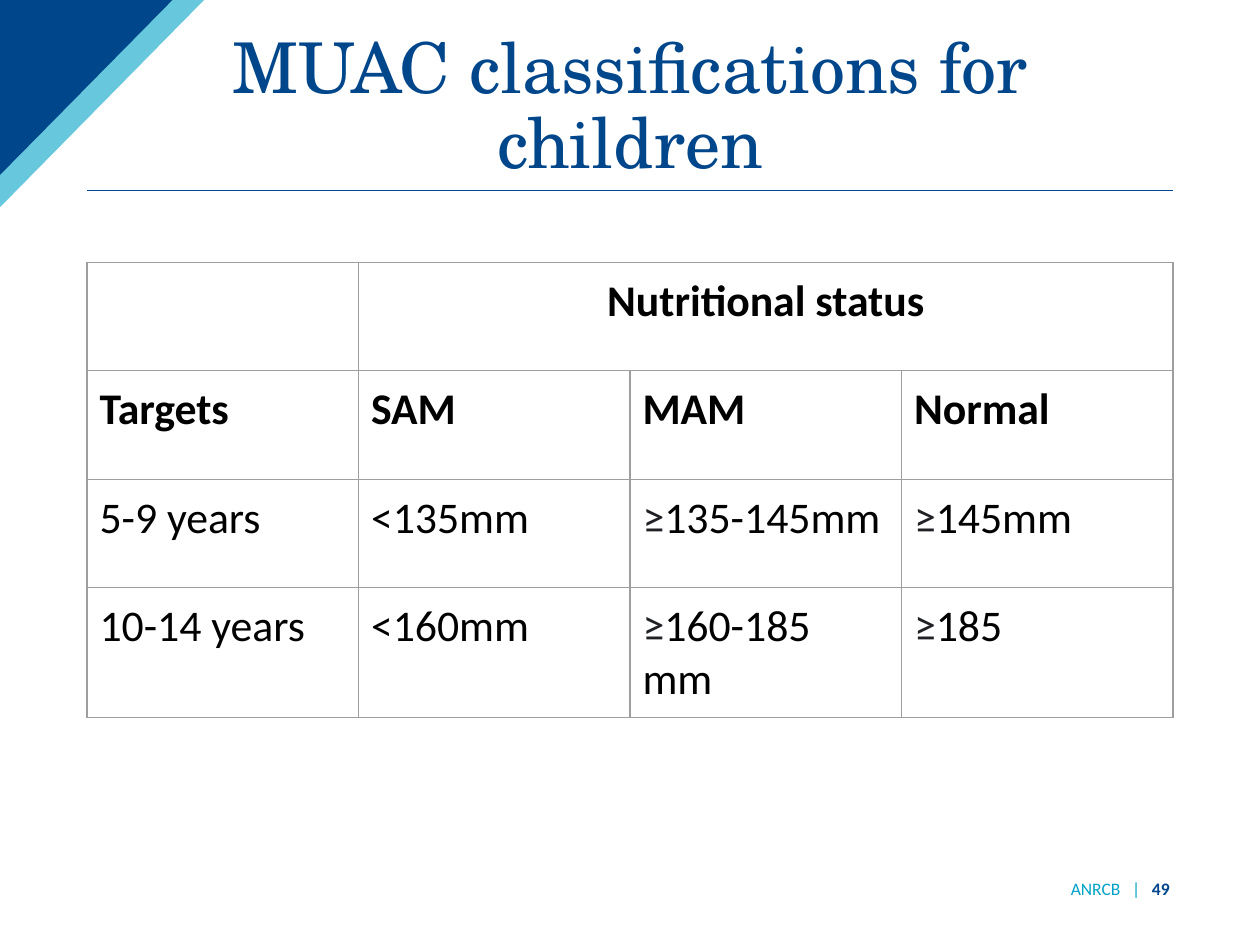
import pptx
import pptx.util
import pptx.dml.color
import pptx.enum.shapes
import pptx.enum.text
import pptx.oxml
import pptx.oxml.ns

Pt = pptx.util.Pt
Align = pptx.enum.text.PP_ALIGN
Anchor = pptx.enum.text.MSO_ANCHOR
qn = pptx.oxml.ns.qn
NS = pptx.oxml.ns.nsdecls("a")
HUES = {"navy": "00468B", "teal": "00A2C7", "black": "000000",
        "sign": "202124", "grid": "9E9E9E"}
SANS, SERIF = "Calibri", "TeX Gyre Schola"


def tint(name):
    return pptx.dml.color.RGBColor.from_string(HUES[name])


def add_run(para, text, size, hue, face=SANS, bold=False):
    run = para.add_run()
    run.text = text
    font = run.font
    font.size, font.name, font.bold = Pt(size), face, bold
    font.color.rgb = tint(hue)
    return run


def text_box(slide, box, anchor, align):
    frame = slide.shapes.add_textbox(*map(Pt, box)).text_frame
    frame.word_wrap = True
    frame.vertical_anchor = anchor
    para = frame.paragraphs[0]
    para.alignment = align
    return para


def corner(slide, box, hue, alpha=100):
    left, top, width, height = map(Pt, box)
    pen = slide.shapes.build_freeform(left, top)
    pen.add_line_segments([(left + width, top), (left, top + height)], close=True)
    shape = pen.convert_to_shape()
    shape.shadow.inherit = False
    shape.line.fill.background()
    shape.fill.solid()
    shape.fill.fore_color.rgb = tint(hue)
    if alpha < 100:
        color = shape.fill._xPr.find(".//" + qn("a:srgbClr"))
        color.append(pptx.oxml.parse_xml(f'<a:alpha {NS} val="{alpha * 1000}"/>'))


def heading(slide, box, text):
    left, top, width, height = box
    base = top + height
    rule = slide.shapes.add_connector(
        pptx.enum.shapes.MSO_CONNECTOR.STRAIGHT,
        Pt(left), Pt(base), Pt(left + width), Pt(base))
    rule.line.color.rgb = tint("navy")
    rule.line.width = Pt(0.75)
    rule._element.spPr.append(pptx.oxml.parse_xml(f"<a:effectLst {NS}/>"))
    para = text_box(slide, box, Anchor.BOTTOM, Align.CENTER)
    para.line_spacing = 0.9
    add_run(para, text, 40, "navy", SERIF)


def footer(slide, box, label, page):
    para = text_box(slide, box, Anchor.MIDDLE, Align.RIGHT)
    for text in (label, " ", "|", " "):
        run = add_run(para, text, 10, "teal")
        if text == " ":
            run._r.get_or_add_rPr().set("spc", "450")
    add_run(para, page, 10, "navy", bold=True)


def frame_cell(cell):
    props = cell._tc.get_or_add_tcPr()
    for spot, side in enumerate("LRTB"):
        props.insert(spot, pptx.oxml.parse_xml(
            f'<a:ln{side} {NS} w="9525"><a:solidFill>'
            f'<a:srgbClr val="{HUES["grid"]}"/></a:solidFill></a:ln{side}>'))


def status_table(slide, box, rows):
    table = slide.shapes.add_table(len(rows), len(rows[0]), *map(Pt, box)).table
    table.first_row = table.horz_banding = False
    for r, row in enumerate(rows):
        for c, text in enumerate(row):
            cell = table.cell(r, c)
            cell.fill.background()
            frame_cell(cell)
            cell.margin_left = cell.margin_right = Pt(7.2)
            cell.margin_top = cell.margin_bottom = Pt(7.2)
            para = cell.text_frame.paragraphs[0]
            if text.startswith("≥"):
                add_run(para, "≥", 25, "sign")
                text = text[1:]
            if text:
                add_run(para, text, 25, "black", bold=r < 2)
    table.cell(0, 1).merge(table.cell(0, 3))
    table.cell(0, 1).text_frame.paragraphs[0].alignment = Align.CENTER


def main():
    deck = pptx.Presentation()
    deck.slide_width, deck.slide_height = Pt(720), Pt(540)
    slide = deck.slides.add_slide(deck.slide_layouts[6])
    corner(slide, (0, 0, 116.6, 118.4), "teal", 60)
    corner(slide, (0, 0, 98.6, 100), "navy")
    heading(slide, (49.7, 28.8, 620.6, 79.9), "MUAC classifications for children")
    status_table(slide, (49.7, 150, 620.6, 247.6), [
        ("", "Nutritional status", "", ""),
        ("Targets", "SAM", "MAM", "Normal"),
        ("5-9 years", "<135mm", "≥135-145mm", "≥145mm"),
        ("10-14 years", "<160mm", "≥160-185 mm", "≥185"),
    ])
    footer(slide, (556.6, 500, 118.8, 15), "ANRCB", "49")
    deck.save("out.pptx")


if __name__ == "__main__":
    main()
